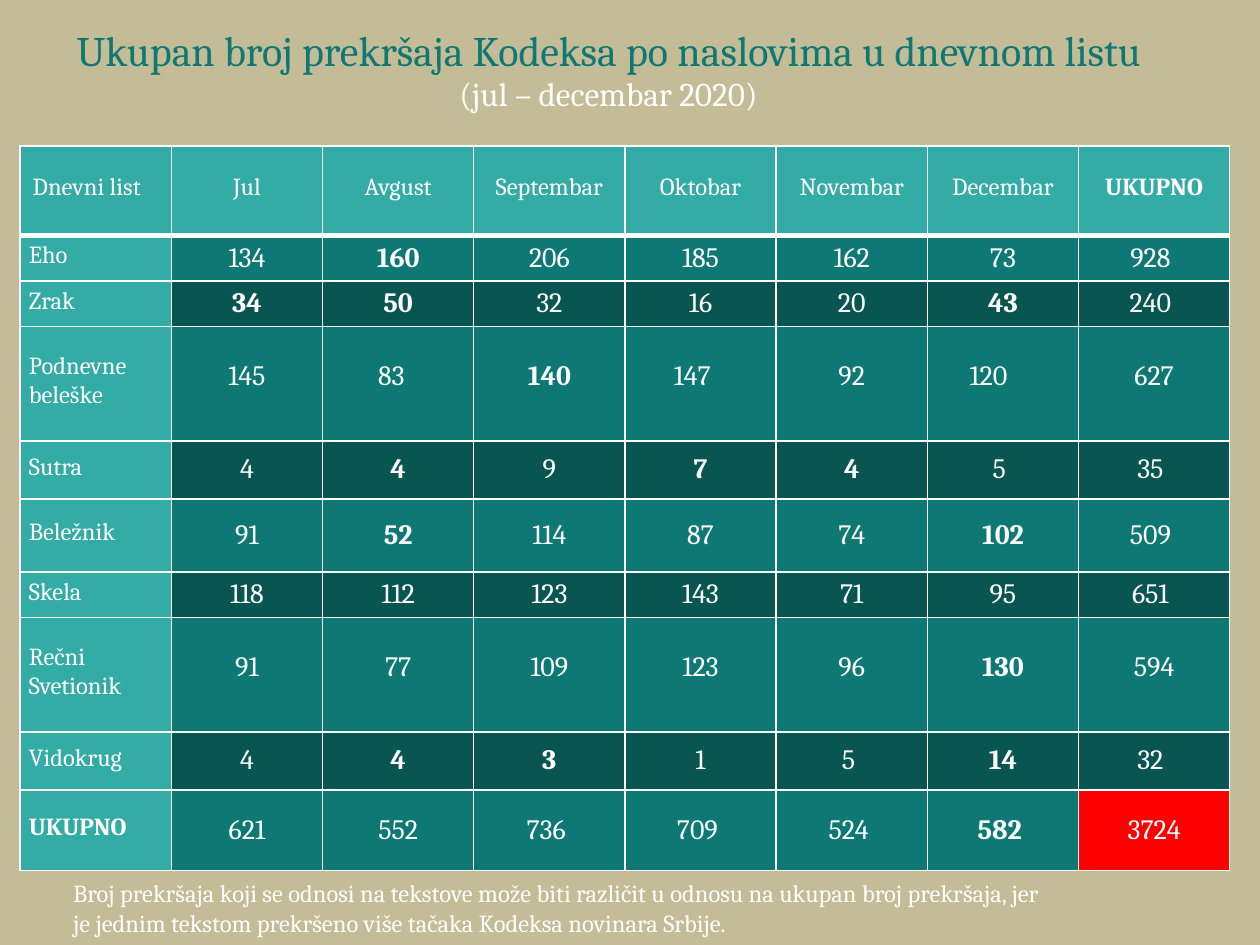
from dataclasses import dataclass

from lxml import etree
from pptx import Presentation
from pptx import util as u
from pptx.dml.color import RGBColor
from pptx.enum import text
from pptx.oxml.ns import qn

SAND = RGBColor(0xC4, 0xBC, 0x96)
WHITE = RGBColor(0xFF, 0xFF, 0xFF)
TURQUOISE = RGBColor(0x33, 0xAC, 0xA6)
TEAL = RGBColor(0x0E, 0x79, 0x74)
DARK_TEAL = RGBColor(0x09, 0x55, 0x52)
RED = RGBColor(0xFF, 0x00, 0x00)
FONT = "Cambria"

SLIDE_COLUMNS, SLIDE_ROWS = 100, 75
LABEL_SIZE, VALUE_SIZE = 14, 16
COLUMN_WIDTH, HEADER_HEIGHT = 12, 7.1
THIN, THICK = 1, 3


@dataclass(frozen=True)
class Newspaper:
    name: str
    height: float
    values: tuple[int, ...]
    bold: tuple[int, ...] = ()
    lift: float = 0  # bottom margin, in grid rows


@dataclass(frozen=True)
class CellStyle:
    fill: RGBColor
    size: float
    bold: bool = False
    align: text.PP_ALIGN = text.PP_ALIGN.CENTER
    left: float = 0
    right: float = 0
    bottom: float = 0
    top_line: float = THIN
    bottom_line: float = THIN


HEADINGS = ("Dnevni list", "Jul", "Avgust", "Septembar", "Oktobar",
            "Novembar", "Decembar", "UKUPNO")
NEWSPAPERS = (
    Newspaper("Eho", 3.6, (134, 160, 206, 185, 162, 73, 928), (2,)),
    Newspaper("Zrak", 3.6, (34, 50, 32, 16, 20, 43, 240), (1, 2, 6)),
    Newspaper("Podnevne\nbeleške", 9.1, (145, 83, 140, 147, 92, 120, 627), (3,), 1.1),
    Newspaper("Sutra", 4.6, (4, 4, 9, 7, 4, 5, 35), (2, 4, 5)),
    Newspaper("Beležnik", 5.8, (91, 52, 114, 87, 74, 102, 509), (2, 6)),
    Newspaper("Skela", 3.6, (118, 112, 123, 143, 71, 95, 651)),
    Newspaper("Rečni\nSvetionik", 9.1, (91, 77, 109, 123, 96, 130, 594), (6,), 1.1),
    Newspaper("Vidokrug", 4.6, (4, 4, 3, 1, 5, 14, 32), (2, 3, 6)),
    Newspaper("UKUPNO", 6.4, (621, 552, 736, 709, 524, 582, 3724), (0, 6)),
)
TOTAL_ROW, TOTAL_COLUMN = len(NEWSPAPERS), len(HEADINGS) - 1
# Right margins of values that stand left of their column's middle
RIGHT_MARGINS = {
    (3, 2): 1.1, (3, 4): 1.3, (3, 6): 2.3, (4, 6): 0.6, (8, 5): 0.5,
    **{(TOTAL_ROW, column): 0.5 for column in range(3, 7)},
    **{(row, TOTAL_COLUMN): 0.6 for row in (1, 2, 4, 5, 6, 8)},
}


def grid(units: float) -> u.Length:
    """Length of a number of slide grid units, a tenth of an inch each."""
    return u.Inches(units / 10)


def add_span(para, words: str, size: float, color: RGBColor, bold: bool = False) -> None:
    span = para.add_run()
    span.text = words
    span.font.name = FONT
    span.font.size = u.Pt(size)
    span.font.bold = bold
    span.font.color.rgb = color


def clear_margins(frame) -> None:
    frame.margin_left = frame.margin_right = frame.margin_bottom = 0
    frame.margin_top = grid(0.1)
    frame.word_wrap = True
    frame.vertical_anchor = text.MSO_ANCHOR.TOP
    frame.auto_size = text.MSO_AUTO_SIZE.SHAPE_TO_FIT_TEXT


def draw_borders(cell, style: CellStyle) -> None:
    properties = cell._tc.get_or_add_tcPr()
    widths = {"L": THIN, "R": THIN, "T": style.top_line, "B": style.bottom_line}
    for side, width in widths.items():
        line = etree.SubElement(properties, qn(f"a:ln{side}"), w=str(u.Pt(width)))
        solid = etree.SubElement(line, qn("a:solidFill"))
        etree.SubElement(solid, qn("a:srgbClr"), val=str(WHITE))


def fill_cell(cell, words: str, style: CellStyle) -> None:
    draw_borders(cell, style)
    cell.fill.solid()
    cell.fill.fore_color.rgb = style.fill
    cell.margin_left, cell.margin_right = grid(style.left), grid(style.right)
    cell.margin_top, cell.margin_bottom = 0, grid(style.bottom)
    cell.vertical_anchor = text.MSO_ANCHOR.MIDDLE
    frame = cell.text_frame
    for index, line in enumerate(words.split("\n")):
        para = frame.add_paragraph() if index else frame.paragraphs[0]
        para.alignment = style.align
        add_span(para, line, style.size, WHITE, style.bold)


def value_fill(row: int, column: int) -> RGBColor:
    if (row, column) == (TOTAL_ROW, TOTAL_COLUMN):
        return RED
    return TEAL if row % 2 else DARK_TEAL


def add_violations_table(page) -> None:
    heights = [HEADER_HEIGHT] + [paper.height for paper in NEWSPAPERS]
    table = page.shapes.add_table(
        len(heights), len(HEADINGS), grid(1.6), grid(11.6),
        grid(COLUMN_WIDTH * len(HEADINGS)), grid(sum(heights))).table
    table.first_row = table.horz_banding = False
    for row, height in zip(table.rows, heights):
        row.height = grid(height)

    for column, heading in enumerate(HEADINGS):
        first = column == 0
        fill_cell(table.cell(0, column), heading, CellStyle(
            TURQUOISE, LABEL_SIZE, column == TOTAL_COLUMN,
            text.PP_ALIGN.LEFT if first else text.PP_ALIGN.CENTER,
            left=1 if first else 0, bottom=0.5, bottom_line=THICK))

    for row, paper in enumerate(NEWSPAPERS, start=1):
        top_line = THICK if row == 1 else THIN
        fill_cell(table.cell(row, 0), paper.name, CellStyle(
            TURQUOISE, LABEL_SIZE, 0 in paper.bold, text.PP_ALIGN.LEFT,
            left=0.7, bottom=0.4, top_line=top_line))
        for column, value in enumerate(paper.values, start=1):
            fill_cell(table.cell(row, column), str(value), CellStyle(
                value_fill(row, column), VALUE_SIZE, column in paper.bold,
                right=RIGHT_MARGINS.get((row, column), 0),
                bottom=paper.lift, top_line=top_line))


def add_note(page) -> None:
    box = page.shapes.add_textbox(grid(5.8), grid(69.6), grid(77.8), grid(4.9))
    clear_margins(box.text_frame)
    para = box.text_frame.paragraphs[0]
    para.space_before = u.Pt(0.9)
    add_span(para, "Broj prekršaja koji se odnosi na tekstove može biti različit u "
             "odnosu na ukupan broj prekršaja, jer je jednim tekstom prekršeno više "
             "tačaka Kodeksa novinara Srbije.", LABEL_SIZE, WHITE)


def write_title(page) -> None:
    title = page.shapes.title
    title.left, title.top = grid(4.2), grid(2)
    title.width, title.height = grid(88.2), grid(7.2)
    frame = title.text_frame
    clear_margins(frame)
    lines = (
        ("Ukupan broj prekršaja Kodeksa po naslovima u dnevnom listu", 24, TEAL, 27.8),
        ("(jul – decembar 2020)", 19, WHITE, 21.8),
    )
    for index, (words, size, color, pitch) in enumerate(lines):
        para = frame.add_paragraph() if index else frame.paragraphs[0]
        para.alignment = text.PP_ALIGN.CENTER
        para.line_spacing = u.Pt(pitch)
        para.space_before = u.Pt(0 if index else 1)
        add_span(para, words, size, color)


def main() -> None:
    deck = Presentation()
    deck.slide_width, deck.slide_height = grid(SLIDE_COLUMNS), grid(SLIDE_ROWS)
    page = deck.slides.add_slide(deck.slide_layouts.get_by_name("Title Only"))
    page.background.fill.solid()
    page.background.fill.fore_color.rgb = SAND
    add_violations_table(page)
    add_note(page)
    write_title(page)
    deck.save("out.pptx")


if __name__ == "__main__":
    main()
